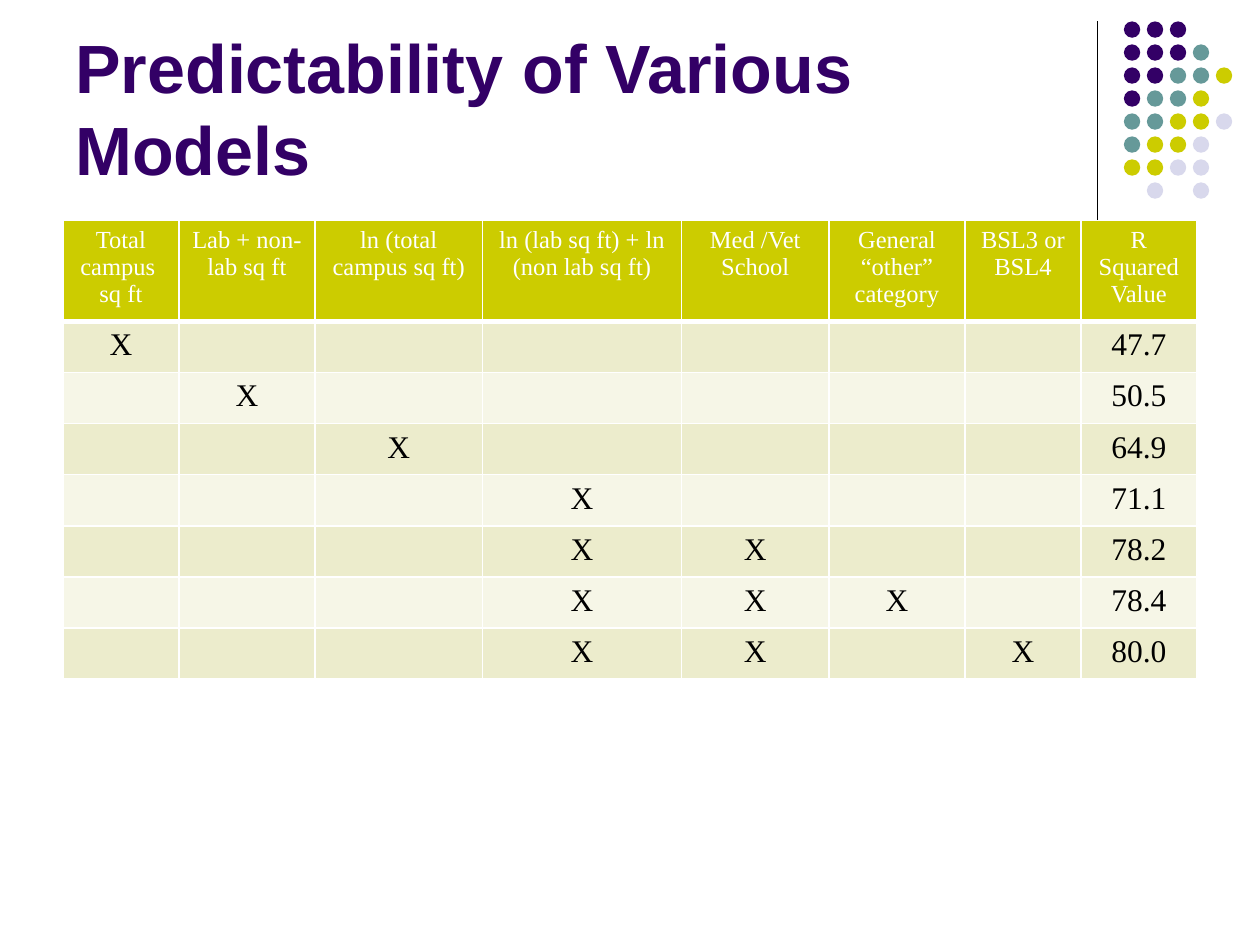
import pptx
import pptx.dml.color
import pptx.enum.shapes
import pptx.enum.text
import pptx.oxml
import pptx.oxml.ns
import pptx.util
from pptx.dml.color import RGBColor
from pptx.util import Inches

PURPLE = RGBColor(0x33, 0x00, 0x66)
TEAL = RGBColor(0x66, 0x99, 0x99)
LIME = RGBColor(0xCC, 0xCC, 0x00)
LAVENDER = RGBColor(0xD8, 0xD8, 0xEC)
DARK_BAND = RGBColor(0xEC, 0xEC, 0xCC)
LIGHT_BAND = RGBColor(0xF6, 0xF6, 0xE7)
BLACK = RGBColor(0x00, 0x00, 0x00)
WHITE = RGBColor(0xFF, 0xFF, 0xFF)

# One letter per dot, row by row; a space leaves a gap
DOT_COLORS = {"P": PURPLE, "T": TEAL, "L": LIME, "V": LAVENDER}
DOT_ROWS = ["PPP", "PPPT", "PPTTL", "PTTL", "TTLLV", "TLLV", "LLVV", " V V"]
DOT_PITCH = 0.73 / 4

HEADINGS = [
    "Total campus \nsq ft", "Lab + non-lab sq ft", "ln (total campus sq ft)",
    "ln (lab sq ft) + ln (non lab sq ft)", "Med /Vet School",
    "General “other” category", "BSL3 or BSL4", "R Squared Value",
]
COLUMN_WIDTHS = [0.92, 1.08, 1.33, 1.58, 1.17, 1.08, 0.92, 0.92]
HEADER_HEIGHT = 0.74
MODEL_HEIGHT = 2.84 / 7

# Columns of the predictors in each model, and its R squared value
MODELS = [
    ([0], "47.7"), ([1], "50.5"), ([2], "64.9"), ([3], "71.1"),
    ([3, 4], "78.2"), ([3, 4, 5], "78.4"), ([3, 4, 6], "80.0"),
]


class SlideBuilder:
    title_font = "Arial"
    table_font = "Times New Roman"

    def __init__(self, slide):
        self.slide = slide

    def style_text(self, frame, font, size, color, bold=False, align=None):
        for paragraph in frame.paragraphs:
            paragraph.alignment = align
            for run in paragraph.runs:
                run.font.name = font
                run.font.size = pptx.util.Pt(size)
                run.font.color.rgb = color
                run.font.bold = bold

    def title(self, text, left, top, width, height):
        box = self.slide.shapes.add_textbox(
            Inches(left), Inches(top), Inches(width), Inches(height))
        frame = box.text_frame
        frame.word_wrap = True
        frame.vertical_anchor = pptx.enum.text.MSO_ANCHOR.BOTTOM
        frame.text = text
        self.style_text(frame, self.title_font, 39, PURPLE, bold=True)

    def rule(self, x, top, bottom):
        line = self.slide.shapes.add_connector(
            pptx.enum.shapes.MSO_CONNECTOR.STRAIGHT,
            Inches(x), Inches(top), Inches(x), Inches(bottom))
        line.line.color.rgb = BLACK
        line.line.width = pptx.util.Pt(0.75)
        pptx.oxml.ns.qn("a:effectLst")
        line._element.spPr.append(pptx.oxml.parse_xml(
            f'<a:effectLst {pptx.oxml.ns.nsdecls("a")}/>'))

    def dot(self, left, top, color):
        dot = self.slide.shapes.add_shape(
            pptx.enum.shapes.MSO_SHAPE.OVAL,
            Inches(left), Inches(top), Inches(0.13), Inches(0.13))
        dot.shadow.inherit = False
        dot.fill.solid()
        dot.fill.fore_color.rgb = color
        dot.line.fill.background()

    def table(self, left, top, widths, heights):
        table = self.slide.shapes.add_table(
            len(heights), len(widths), Inches(left), Inches(top),
            Inches(sum(widths)), Inches(sum(heights))).table
        for column, width in zip(table.columns, widths):
            column.width = Inches(width)
        for row, height in zip(table.rows, heights):
            row.height = Inches(height)
        return table

    def cell(self, cell, text, size, color, fill, bottom_border=1):
        properties = cell._tc.get_or_add_tcPr()
        for side, points in (("L", 1), ("R", 1), ("T", 1), ("B", bottom_border)):
            properties.append(pptx.oxml.parse_xml(
                f'<a:ln{side} {pptx.oxml.ns.nsdecls("a")} w="{points * 12700}">'
                f'<a:solidFill><a:srgbClr val="{WHITE}"/></a:solidFill></a:ln{side}>'))
        cell.fill.solid()
        cell.fill.fore_color.rgb = fill
        cell.text_frame.text = text
        self.style_text(cell.text_frame, self.table_font, size, color,
                        align=pptx.enum.text.PP_ALIGN.CENTER)


def main():
    deck = pptx.Presentation()
    deck.slide_width, deck.slide_height = Inches(10), Inches(7.5)
    builder = SlideBuilder(deck.slides.add_slide(deck.slide_layouts[6]))

    # Corner decoration
    builder.rule(8.71, 0.17, 1.83)
    for row, letters in enumerate(DOT_ROWS):
        for column, letter in enumerate(letters):
            if letter in DOT_COLORS:
                builder.dot(8.92 + column * DOT_PITCH, 0.17 + row * DOT_PITCH,
                            DOT_COLORS[letter])

    # Title
    builder.title("Predictability of Various Models", 0.5, 0.13, 8.25, 1.42)

    # Model table
    heights = [HEADER_HEIGHT] + [MODEL_HEIGHT] * len(MODELS)
    models = builder.table(0.5, 1.75, COLUMN_WIDTHS, heights)
    for column, heading in enumerate(HEADINGS):
        builder.cell(models.cell(0, column), heading, 14, WHITE, LIME, bottom_border=3)
    for row, (predictors, r_squared) in enumerate(MODELS, start=1):
        marks = ["X" if column in predictors else ""
                 for column in range(len(HEADINGS) - 1)]
        band = DARK_BAND if row % 2 else LIGHT_BAND
        for column, text in enumerate(marks + [r_squared]):
            builder.cell(models.cell(row, column), text, 18, BLACK, band)

    deck.save("out.pptx")


if __name__ == "__main__":
    main()
